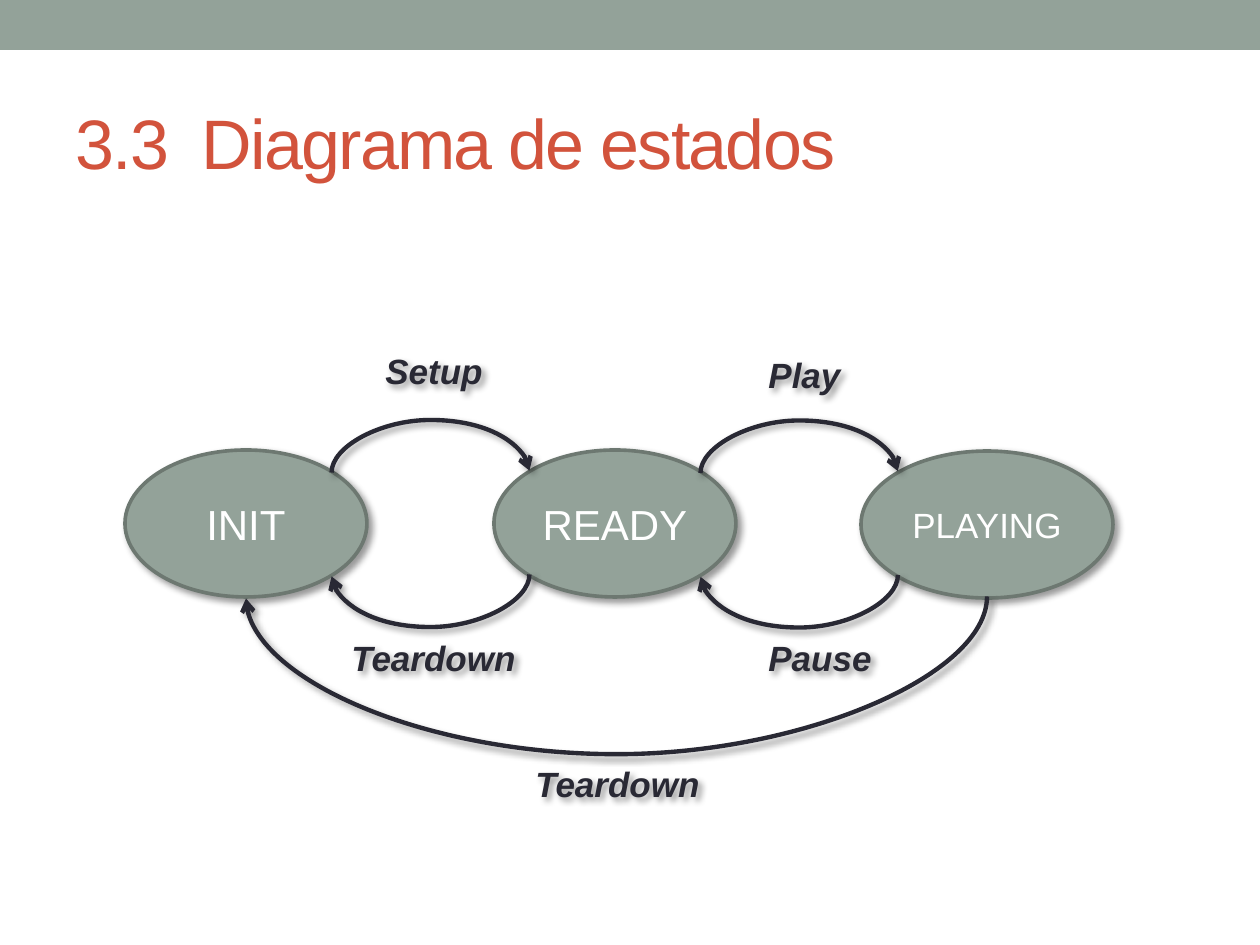
import math
from dataclasses import dataclass

import pptx
import pptx.dml.color
import pptx.enum.shapes
import pptx.enum.text
import pptx.oxml
import pptx.oxml.ns
import pptx.util

PX = 914400 / 126  # EMU in one px
qn = pptx.oxml.ns.qn
SHAPE = pptx.enum.shapes.MSO_SHAPE
ALIGN = pptx.enum.text.PP_ALIGN
ANCHOR = pptx.enum.text.MSO_ANCHOR


@dataclass(frozen=True)
class Theme:
    font: str = "Arial"
    sage: str = "93A299"
    sage_dark: str = "6D7871"
    title: str = "D2533C"
    ink: str = "292934"
    white: str = "FFFFFF"
    title_size: int = 40
    state_size: int = 24
    small_size: int = 20
    outline: float = 2.08
    arrow: float = 2.5


THEME = Theme()

# Connection sites of an ellipse, as (index, angle in degrees clockwise from the right)
TOP_LEFT, BOTTOM_LEFT, BOTTOM = (1, 225), (3, 135), (4, 90)
BOTTOM_RIGHT, TOP_RIGHT = (5, 45), (7, 315)

# Name, box inside the diagram, type size
STATES = [
    ("INIT", (0, 107, 242, 147), THEME.state_size),
    ("READY", (369, 107, 242, 147), THEME.state_size),
    ("PLAYING", (736, 108, 252, 147), THEME.small_size),
]

# Label, label box inside the diagram, from, site, to, site, bulge
TRANSITIONS = [
    ("Setup", (248, 0, 150, 55), "INIT", TOP_RIGHT, "READY", TOP_LEFT, 53),
    ("Play", (631, 4, 105, 55), "READY", TOP_RIGHT, "PLAYING", TOP_LEFT, 53),
    ("Teardown", (214, 287, 218, 55), "READY", BOTTOM_LEFT, "INIT", BOTTOM_RIGHT, 53),
    ("Pause", (631, 287, 140, 55), "PLAYING", BOTTOM_LEFT, "READY", BOTTOM_RIGHT, 53),
    ("Teardown", (398, 413, 233, 55), "PLAYING", BOTTOM, "INIT", BOTTOM, 159),
]


def emu(*lengths):
    return [pptx.util.Emu(round(length * PX)) for length in lengths]


def rgb(color):
    return pptx.dml.color.RGBColor.from_string(color)


def add_xml(parent, tag, **attributes):
    child = parent.makeelement(qn(tag), attributes)
    parent.append(child)
    return child


def write(frame, text, size, color, align=ALIGN.LEFT, emphasis=False):
    frame.text = text
    paragraph = frame.paragraphs[0]
    paragraph.alignment = align
    font = paragraph.runs[0].font
    font.name = THEME.font
    font.size = pptx.util.Pt(size)
    font.color.rgb = rgb(color)
    font.bold = font.italic = emphasis


def add_shadow(properties):
    effects = properties.find(qn("a:effectLst"))
    if effects is None:
        effects = add_xml(properties, "a:effectLst")
    shadow = add_xml(effects, "a:outerShdw", blurRad="50800", dist="38100",
                     dir="2700000", algn="tl", rotWithShape="0")
    black = add_xml(shadow, "a:srgbClr", val="000000")
    add_xml(black, "a:alpha", val="40000")


def add_filled(slide, kind, box, color):
    shape = slide.shapes.add_shape(kind, *emu(*box))
    shape.shadow.inherit = False
    shape.fill.solid()
    shape.fill.fore_color.rgb = rgb(color)
    shape.line.fill.background()
    return shape


def add_heading(slide, box, text):
    title = slide.shapes.title
    title.left, title.top, title.width, title.height = emu(*box)
    title.text_frame.vertical_anchor = ANCHOR.MIDDLE
    write(title.text_frame, text, THEME.title_size, THEME.title)
    title.text_frame.paragraphs[0].runs[0].font._element.set("spc", "-100")


def add_state(slide, box, name, size):
    state = add_filled(slide, SHAPE.OVAL, box, THEME.sage)
    state.line.color.rgb = rgb(THEME.sage_dark)
    state.line.width = pptx.util.Pt(THEME.outline)
    add_shadow(state._element.spPr)
    state.text_frame.vertical_anchor = ANCHOR.MIDDLE
    write(state.text_frame, name, size, THEME.white, ALIGN.CENTER)
    return state


def site_point(box, site):
    left, top, width, height = box
    angle = math.radians(site[1])
    return (left + width / 2 * (1 + math.cos(angle)),
            top + height / 2 * (1 + math.sin(angle)))


def add_arc(slide, start, end, bulge):
    """Draw a curved arrow; start and end are (state, box, site)."""
    (x1, y1), (x2, y2) = (site_point(box, site) for _, box, site in (start, end))
    # The connector is a thin upright box, turned to lie between both sites
    thickness, span = 2, abs(x2 - x1)
    left = (x1 + x2 - thickness) / 2
    top = (y1 + y2 - span) / 2
    arc = slide.shapes.add_connector(
        pptx.enum.shapes.MSO_CONNECTOR.CURVE,
        *emu(left, top, left + thickness, top + span))
    properties = arc._element.spPr
    turn = 270 if x2 > x1 else 90  # rightward arcs rise, leftward arcs sag
    properties.find(qn("a:xfrm")).set("rot", str(turn * 60000))
    adjustments = properties.find(qn("a:prstGeom")).get_or_add_avLst()
    add_xml(adjustments, "a:gd", name="adj1",
            fmla=f"val {round(bulge / thickness * 100000)}")

    arc.line.color.rgb = rgb(THEME.ink)
    arc.line.width = pptx.util.Pt(THEME.arrow)
    add_xml(arc.line._get_or_add_ln(), "a:tailEnd", type="arrow")
    add_shadow(properties)

    # Join both ends to the ellipses
    joints = arc._element.find(qn("p:nvCxnSpPr")).find(qn("p:cNvCxnSpPr"))
    for tag, (state, _, site) in (("a:stCxn", start), ("a:endCxn", end)):
        add_xml(joints, tag, id=str(state.shape_id), idx=str(site[0]))


def add_label(slide, box, text):
    label = slide.shapes.add_textbox(*emu(*box))
    label.text_frame.word_wrap = True
    write(label.text_frame, text, THEME.small_size, THEME.ink, emphasis=True)
    add_shadow(label._element.spPr)


def add_diagram(slide, box):
    left, top = box[:2]

    def place(part):
        return (left + part[0], top + part[1], *part[2:])

    # States
    states = {}
    for name, part, size in STATES:
        states[name] = (add_state(slide, place(part), name, size), place(part))

    # Transitions
    for text, part, source, leave, target, arrive, bulge in TRANSITIONS:
        add_arc(slide, (*states[source], leave), (*states[target], arrive), bulge)
        add_label(slide, place(part), text)


def main():
    deck = pptx.Presentation()
    deck.slide_width, deck.slide_height = emu(1260, 945)
    slide = deck.slides.add_slide(deck.slide_layouts[5])
    add_filled(slide, SHAPE.RECTANGLE, (0, 0, 1260, 50), THEME.sage)
    add_heading(slide, (63, 73, 1134, 136), "3.3\tDiagrama de estados")
    add_diagram(slide, (125, 343, 988, 468))
    deck.save("out.pptx")


if __name__ == "__main__":
    main()
